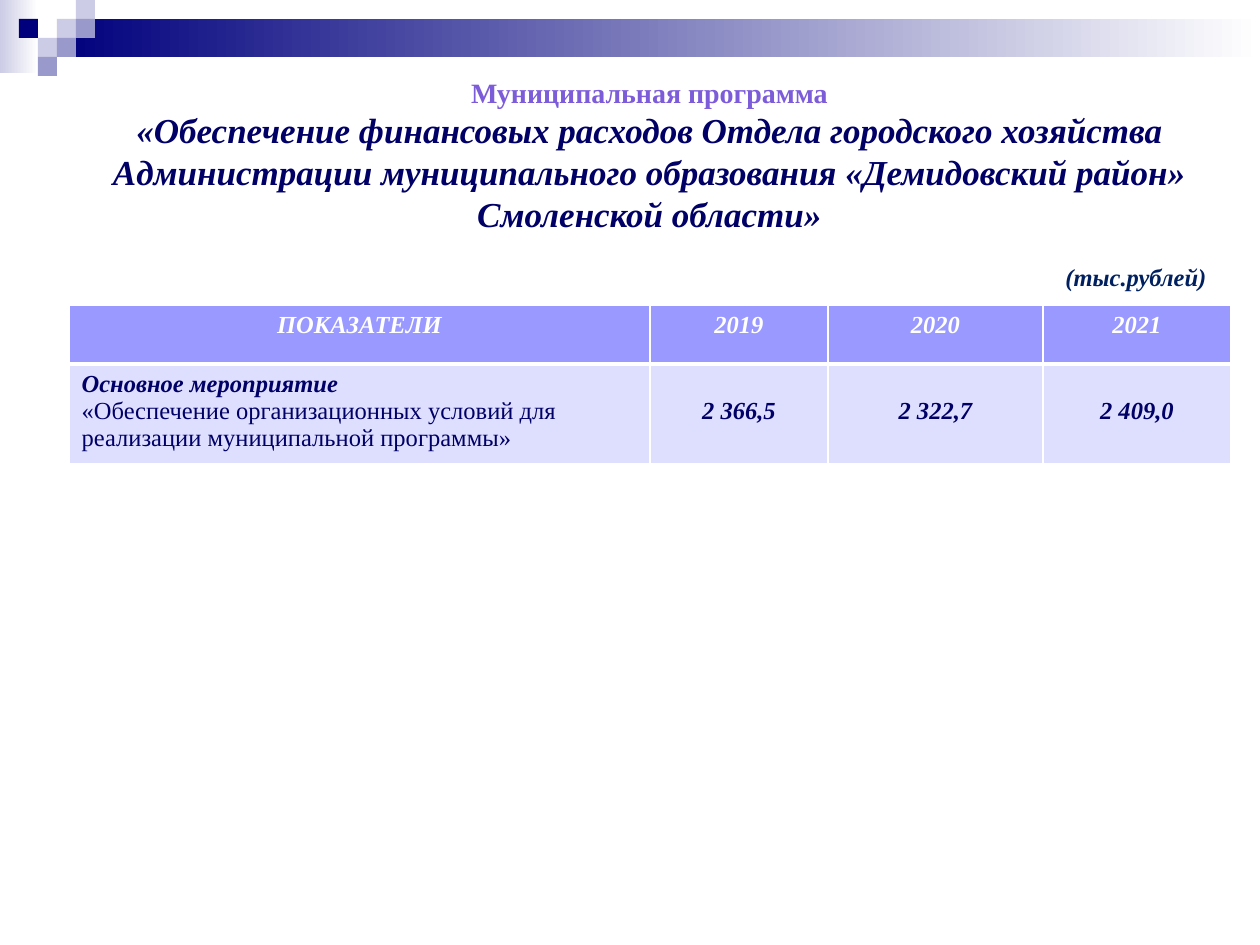
from lxml.etree import SubElement
from pptx import Presentation
from pptx.dml.color import RGBColor
from pptx.enum.shapes import MSO_SHAPE as Shape
from pptx.enum.text import MSO_ANCHOR as Anchor, MSO_AUTO_SIZE as AutoSize, PP_ALIGN as Align
from pptx.oxml.ns import qn
from pptx.util import Emu, Pt

EMU_PER_PX = 914400 / 126
FONT = "Times New Roman"
WHITE = RGBColor(0xFF, 0xFF, 0xFF)
NAVY = RGBColor(0x00, 0x00, 0x7D)
INK = RGBColor(0x00, 0x00, 0x66)
UNIT_INK = RGBColor(0x00, 0x20, 0x60)
VIOLET = RGBColor(0x7D, 0x5C, 0xDA)
LILAC = RGBColor(0xCC, 0xCC, 0xE6)
MAUVE = RGBColor(0x99, 0x99, 0xCC)
HEADER_FILL = RGBColor(0x99, 0x99, 0xFF)
BODY_FILL = RGBColor(0xDE, 0xDE, 0xFF)

TILE = 19
TILES = [(3, 1, LILAC), (4, 0, LILAC), (4, 1, MAUVE), (2, 2, LILAC),
         (1, 1, NAVY), (3, 2, MAUVE), (2, 3, MAUVE)]
COLUMN_WIDTHS = [581, 178, 215, 188]
ROW_HEIGHTS = [59, 100]
HEADERS = ["ПОКАЗАТЕЛИ", "2019", "2020", "2021"]
ACTIVITY = ["Основное мероприятие",
            "«Обеспечение организационных условий для реализации муниципальной программы»"]
AMOUNTS = ["2 366,5", "2 322,7", "2 409,0"]


def px(length):
    return Emu(round(length * EMU_PER_PX))


def px_box(box):
    return [px(length) for length in box]


def style(para, size, color, bold=True, italic=True, align=Align.LEFT):
    para.alignment = align
    for span in para.runs:
        font = span.font
        font.name, font.size = FONT, Pt(size)
        font.bold, font.italic = bold, italic
        font.color.rgb = color


def add_block(page, box, color, fade_to=None):
    block = page.shapes.add_shape(Shape.RECTANGLE, *px_box(box))
    block.shadow.inherit = False
    block.line.fill.background()
    if fade_to is None:
        block.fill.solid()
        block.fill.fore_color.rgb = color
    else:
        block.fill.gradient()
        block.fill.gradient_angle = 0
        for stop, shade in zip(block.fill.gradient_stops, (color, fade_to)):
            stop.color.rgb = shade


def add_banner(page, box):
    left, top, width, height = box
    add_block(page, (left, top, 2 * TILE, height), LILAC, WHITE)
    add_block(page, (left + 3 * TILE, top + TILE, width - 3 * TILE, 2 * TILE), NAVY, WHITE)
    for column, row, color in TILES:
        add_block(page, (left + column * TILE, top + row * TILE, TILE, TILE), color)


def set_heading(page, box):
    title = page.shapes.title
    title.left, title.top, title.width, title.height = px_box(box)
    frame = title.text_frame
    frame.word_wrap = True
    frame.auto_size = AutoSize.NONE
    frame.vertical_anchor = Anchor.TOP
    label = frame.paragraphs[0]
    label.text = "Муниципальная программа"
    style(label, 16, VIOLET, italic=False, align=Align.CENTER)
    name = frame.add_paragraph()
    name.text = ("«Обеспечение финансовых расходов Отдела городского хозяйства "
                 "Администрации муниципального образования «Демидовский район» "
                 "Смоленской области»")
    style(name, 20, INK, align=Align.CENTER)


def add_unit_label(page, box):
    label = page.shapes.add_textbox(*px_box(box))
    label.text_frame.word_wrap = False
    label.text_frame.text = "(тыс.рублей)"
    style(label.text_frame.paragraphs[0], 14, UNIT_INK)


def set_borders(cell, top, bottom):
    properties = cell._tc.get_or_add_tcPr()
    for side, width in (("L", 1), ("R", 1), ("T", top), ("B", bottom)):
        line = SubElement(properties, qn(f"a:ln{side}"), w=str(Pt(width)))
        fill = SubElement(line, qn("a:solidFill"))
        SubElement(fill, qn("a:srgbClr"), val=str(WHITE))


def fill_cell(cell, text, fill, color, top, bottom, align=Align.CENTER):
    set_borders(cell, top, bottom)
    cell.fill.solid()
    cell.fill.fore_color.rgb = fill
    cell.text_frame.text = text
    for para in cell.text_frame.paragraphs:
        style(para, 14, color, align=align)


def add_budget_table(page, box):
    table = page.shapes.add_table(2, len(HEADERS), *px_box(box)).table
    for column, width in zip(table.columns, COLUMN_WIDTHS):
        column.width = px(width)
    for row, height in zip(table.rows, ROW_HEIGHTS):
        row.height = px(height)
    for index, header in enumerate(HEADERS):
        fill_cell(table.cell(0, index), header, HEADER_FILL, WHITE, 1, 3)
    activity = table.cell(1, 0)
    fill_cell(activity, "\n".join(ACTIVITY), BODY_FILL, INK, 3, 1, Align.LEFT)
    style(activity.text_frame.paragraphs[1], 14, INK, bold=False, italic=False)
    for index, amount in enumerate(AMOUNTS, start=1):
        cell = table.cell(1, index)
        fill_cell(cell, amount, BODY_FILL, INK, 3, 1)
        cell.vertical_anchor = Anchor.MIDDLE
        cell.margin_bottom = px(12)


def main():
    deck = Presentation()
    deck.slide_width, deck.slide_height = px(1260), px(945)
    page = deck.slides.add_slide(deck.slide_layouts[5])
    add_banner(page, (0, 0, 1260, 73))
    set_heading(page, (39, 69, 1221, 174))
    add_budget_table(page, (69, 305, sum(COLUMN_WIDTHS), sum(ROW_HEIGHTS)))
    add_unit_label(page, (1053, 256, 168, 43))
    deck.save("out.pptx")


if __name__ == "__main__":
    main()
